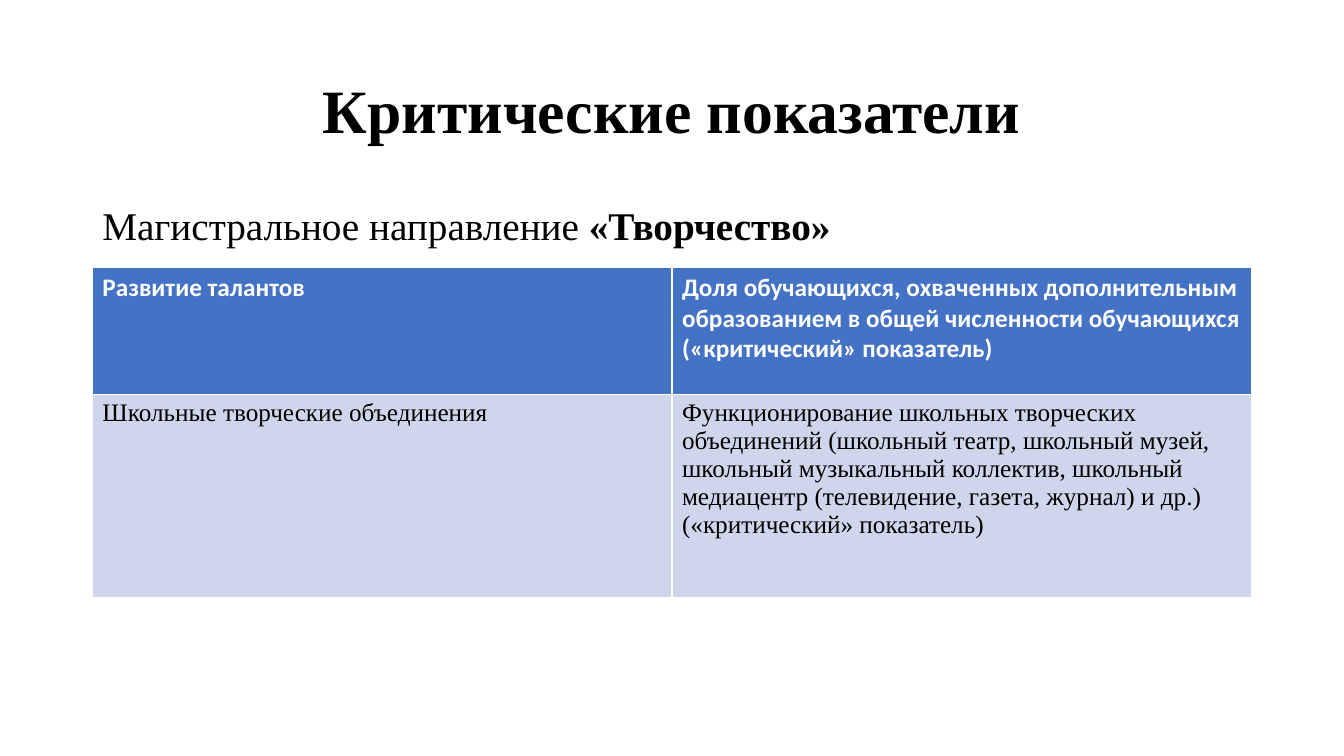
from pptx import Presentation
from pptx.dml.color import RGBColor
from pptx.enum.text import MSO_ANCHOR as Anchor, PP_ALIGN as Align
from pptx.util import Pt

SERIF, SANS = "Times New Roman", "Calibri"
BLACK, WHITE, BLUE, PALE = "000000", "FFFFFF", "4472C4", "CFD5EA"
LEFT, WIDTH = 66, 828

INDICATORS = [
    ("Развитие талантов",
     "Доля обучающихся, охваченных дополнительным образованием в общей "
     "численности обучающихся («критический» показатель)"),
    ("Школьные творческие объединения",
     "Функционирование школьных творческих объединений (школьный театр, "
     "школьный музей, школьный музыкальный коллектив, школьный медиацентр "
     "(телевидение, газета, журнал) и др.) («критический» показатель)"),
]
ROW_HEIGHTS = (90.7, 145.4)


def color(hex_code):
    return RGBColor.from_string(hex_code)


def add_text(paragraph, text, size=18, font=SERIF, ink=BLACK, bold=False):
    run = paragraph.add_run()
    run.text = text
    run.font.size = Pt(size)
    run.font.name = font
    run.font.bold = bold
    run.font.color.rgb = color(ink)


def add_box(slide, top, height, anchor=Anchor.TOP, align=Align.LEFT):
    """Add a full-width text box and return its first paragraph."""
    frame = slide.shapes.add_textbox(
        Pt(LEFT), Pt(top), Pt(WIDTH), Pt(height)).text_frame
    frame.word_wrap = True
    frame.vertical_anchor = anchor
    paragraph = frame.paragraphs[0]
    paragraph.alignment = align
    paragraph.line_spacing = 0.9
    return paragraph


def add_indicator_table(slide, top):
    # White cell borders come from the default table style
    table = slide.shapes.add_table(
        len(INDICATORS), 2, Pt(LEFT), Pt(top), Pt(WIDTH),
        Pt(sum(ROW_HEIGHTS))).table
    for r, (entries, height) in enumerate(zip(INDICATORS, ROW_HEIGHTS)):
        table.rows[r].height = Pt(height)
        header = r == 0
        text_format = dict(font=SANS, ink=WHITE, bold=True) if header else {}
        for c, entry in enumerate(entries):
            cell = table.cell(r, c)
            cell.fill.solid()
            cell.fill.fore_color.rgb = color(BLUE if header else PALE)
            add_text(cell.text_frame.paragraphs[0], entry, **text_format)


def main():
    prs = Presentation()
    prs.slide_width, prs.slide_height = Pt(960), Pt(540)
    slide = prs.slides.add_slide(prs.slide_layouts[6])

    # Title
    title = add_box(slide, 28.8, 104.4, Anchor.MIDDLE, Align.CENTER)
    add_text(title, "Критические показатели", size=44, bold=True)

    # Direction heading
    direction = add_box(slide, 143.75, 342.6)
    direction.space_before = Pt(10)
    add_text(direction, "Магистральное направление ", size=28)
    add_text(direction, "«Творчество»", size=28, bold=True)

    # Indicators
    add_indicator_table(slide, 191)

    prs.save("out.pptx")


if __name__ == "__main__":
    main()
